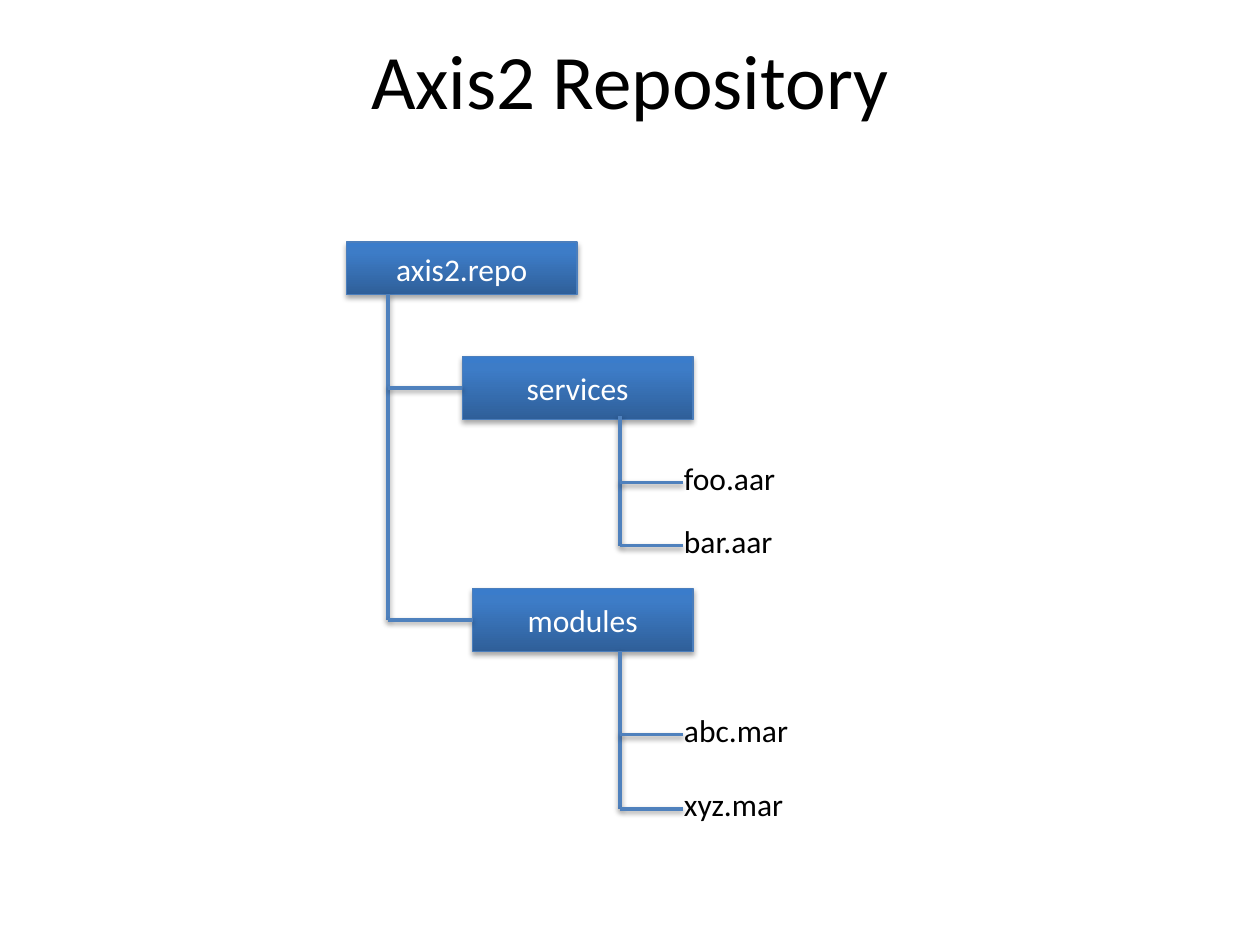
from lxml.etree import SubElement
from pptx import Presentation
from pptx.dml.color import RGBColor
from pptx.enum.shapes import MSO_CONNECTOR, MSO_SHAPE
from pptx.enum.text import MSO_ANCHOR, MSO_AUTO_SIZE, PP_ALIGN
from pptx.oxml import parse_xml
from pptx.oxml.ns import nsdecls, qn
from pptx.util import Inches, Pt

TITLE = "Axis2 Repository"
# Folder name: left, top, width, height in inches
FOLDERS = {
    "axis2.repo": (2.75, 1.92, 1.83, 0.42),
    "services": (3.67, 2.83, 1.83, 0.5),
    "modules": (3.75, 4.67, 1.75, 0.5),
}
# Files: name and height of the branch leading to it
FILES = [("foo.aar", 3.83), ("bar.aar", 4.33), ("abc.mar", 5.83), ("xyz.mar", 6.42)]
# Trunk: x, top, then the (right end, y) of each branch; it stops at the last one
FILE_TRUNK, FILE_BRANCH_END = 4.92, 5.42
TREES = [
    (3.08, 2.33, [(3.67, 3.08), (3.75, 4.92)]),
    (FILE_TRUNK, 3.3, [(FILE_BRANCH_END, y) for _, y in FILES[:2]]),
    (FILE_TRUNK, 5.17, [(FILE_BRANCH_END, y) for _, y in FILES[2:]]),
]
LABEL_LEFT, LABEL_RISE, LABEL_SIZE = 5.33, 0.24, (1.33, 0.4)
GRADIENT = [(0, "2F5F99"), (80, "3D7CC7"), (100, "3A7CCB")]
BOX_EDGE, BRANCH, BLACK, WHITE = "4B7EBC", "4F81BD", "000000", "FFFFFF"


def color(value):
    return RGBColor.from_string(value)


def write(text_frame, text, size, text_color, alignment):
    paragraph = text_frame.paragraphs[0]
    paragraph.alignment = alignment
    run = paragraph.add_run()
    run.text = text
    run.font.name = "Calibri"
    run.font.size = Pt(size)
    run.font.color.rgb = color(text_color)


def add_shadow(effects, distance, opacity):
    """Put a soft downward shadow in an effect list."""
    shadow = SubElement(effects, qn("a:outerShdw"), blurRad=str(Pt(3.1)),
                        dist=str(Pt(distance)), dir="5400000", rotWithShape="0")
    shade = SubElement(shadow, qn("a:srgbClr"), val=BLACK)
    SubElement(shade, qn("a:alpha"), val=str(opacity * 1000))


def fill_gradient(shape):
    stops = "".join(f'<a:gs pos="{position * 1000}"><a:srgbClr val="{value}"/></a:gs>'
                    for position, value in GRADIENT)
    shape.fill.background()
    properties = shape._element.spPr
    properties.replace(properties.find(qn("a:noFill")), parse_xml(
        f'<a:gradFill {nsdecls("a")} rotWithShape="1"><a:gsLst>{stops}</a:gsLst>'
        '<a:lin ang="16200000" scaled="0"/></a:gradFill>'))


def add_folder(slide, name, place):
    shape = slide.shapes.add_shape(MSO_SHAPE.RECTANGLE, *map(Inches, place))
    fill_gradient(shape)
    shape.line.color.rgb = color(BOX_EDGE)
    shape.line.width = Pt(0.75)
    shape.shadow.inherit = False
    add_shadow(shape._element.spPr.find(qn("a:effectLst")), 1.8, 35)
    shape.text_frame.vertical_anchor = MSO_ANCHOR.MIDDLE
    write(shape.text_frame, name, 18, WHITE, PP_ALIGN.CENTER)


def add_file(slide, name, y):
    place = (LABEL_LEFT, y - LABEL_RISE, *LABEL_SIZE)
    text_frame = slide.shapes.add_textbox(*map(Inches, place)).text_frame
    text_frame.word_wrap = True
    text_frame.auto_size = MSO_AUTO_SIZE.SHAPE_TO_FIT_TEXT
    write(text_frame, name, 18, BLACK, PP_ALIGN.LEFT)


def add_line(slide, *ends):
    line = slide.shapes.add_connector(MSO_CONNECTOR.STRAIGHT, *map(Inches, ends))
    line.line.color.rgb = color(BRANCH)
    line.line.width = Pt(2)
    add_shadow(SubElement(line._element.spPr, qn("a:effectLst")), 1.6, 38)


def main():
    presentation = Presentation()
    presentation.slide_width, presentation.slide_height = Inches(10), Inches(7.5)
    slide = presentation.slides.add_slide(presentation.slide_layouts[5])

    title = slide.shapes.title
    title.left, title.top, title.width, title.height = map(Inches, (0.5, 0, 9, 1.25))
    title.text_frame.vertical_anchor = MSO_ANCHOR.MIDDLE
    write(title.text_frame, TITLE, 44, BLACK, PP_ALIGN.CENTER)

    for name, place in FOLDERS.items():
        add_folder(slide, name, place)
    for name, y in FILES:
        add_file(slide, name, y)
    for x, top, branches in TREES:
        add_line(slide, x, top, x, branches[-1][1])
        for end, y in branches:
            add_line(slide, x, y, end, y)

    presentation.save("out.pptx")


if __name__ == "__main__":
    main()
